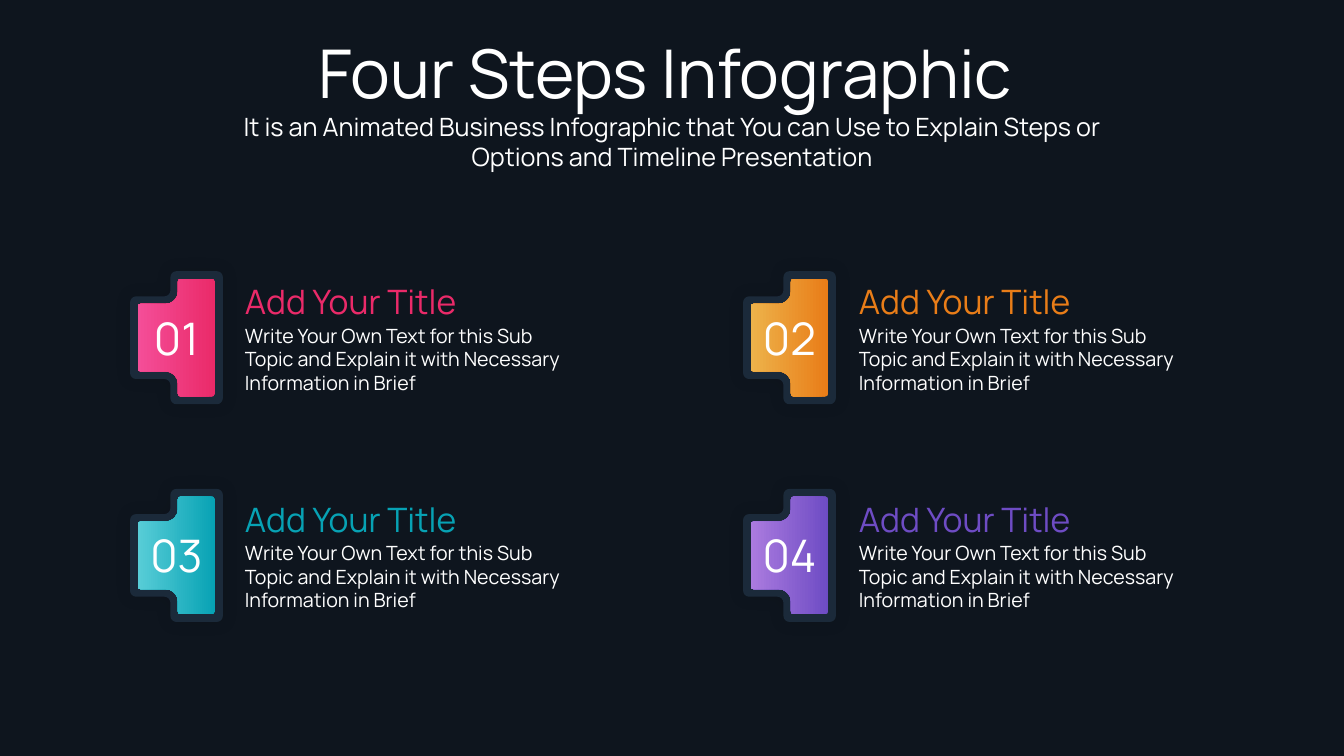
from lxml.etree import SubElement
from pptx import Presentation
from pptx.dml.color import RGBColor
from pptx.enum.text import MSO_AUTO_SIZE as AutoSize, PP_ALIGN as Align
from pptx.oxml.ns import qn
from pptx.util import Inches, Pt

FONT = "Manrope"
WHITE = "FFFFFF"
BACKGROUND = "0E151E"
FRAME = "1B2A3A"
FRAME_SIZE = (0.92, 1.32)
FACE_SIZE = (0.77, 1.17)
STEP_X, STEP_Y = 0.4, 0.25
CURVE = 0.55
COLUMNS = ((1.29, 2.33), (7.37, 8.42))
ROWS = (2.69, 4.85)
HEADING = "Add Your Title"
DETAILS = [
    "Write Your Own Text for this Sub",
    "Topic and Explain it with Necessary",
    "Information in Brief",
]
STEPS = [
    ("01", "EA2A69", "F44E98"),
    ("02", "E97D18", "EDB24A"),
    ("03", "07A2B4", "58CDD7"),
    ("04", "6E4CC4", "AB7BDF"),
]


def color(hex_value):
    """Return the colour for a hex string."""
    return RGBColor.from_string(hex_value)


def paint(fill, *hex_values):
    """Fill with one plain colour, or with a gradient from right to left."""
    if len(hex_values) == 1:
        fill.solid()
        fill.fore_color.rgb = color(hex_values[0])
        return
    fill.gradient()
    fill.gradient_angle = 180
    for stop, hex_value in zip(fill.gradient_stops, hex_values):
        stop.color.rgb = color(hex_value)


def add_text(shapes, box, lines, size, hex_values, align=Align.LEFT, wrap=False):
    """Add a text box with one paragraph per line."""
    text_box = shapes.add_textbox(*[Inches(length) for length in box])
    frame = text_box.text_frame
    frame.word_wrap = wrap
    frame.auto_size = AutoSize.SHAPE_TO_FIT_TEXT
    for index, line in enumerate(lines):
        paragraph = frame.add_paragraph() if index else frame.paragraphs[0]
        paragraph.alignment = align
        run = paragraph.add_run()
        run.text = line
        run.font.name = FONT
        run.font.size = Pt(size)
        paint(run.font.fill, *hex_values)


def move_toward(start, target, distance):
    """Return the point at a distance from start along an axis to target."""
    dx, dy = target[0] - start[0], target[1] - start[1]
    length = abs(dx) + abs(dy)
    return start[0] + dx / length * distance, start[1] + dy / length * distance


def curve_corner(line, start, corner, end):
    """Turn the line that cuts a corner into a Bezier curve."""
    controls = [tuple(p + CURVE * (c - p) for p, c in zip(point, corner))
                for point in (start, end)]
    line.tag = qn("a:cubicBezTo")
    line.clear()
    for x, y in controls + [end]:
        SubElement(line, qn("a:pt"), x=str(Inches(x)), y=str(Inches(y)))


def add_tab(shapes, left, top, size, outer_radius, inner_radius):
    """Add a stepped tab with rounded corners."""
    width, height = size
    lower = height - STEP_Y
    corners = [
        (width, 0), (width, height), (STEP_X, height), (STEP_X, lower),
        (0, lower), (0, STEP_Y), (STEP_X, STEP_Y), (STEP_X, 0),
    ]
    arcs = []
    for index, corner in enumerate(corners):
        radius = inner_radius if index in (3, 6) else outer_radius
        arcs.append((move_toward(corner, corners[index - 1], radius), corner,
                     move_toward(corner, corners[(index + 1) % 8], radius)))
    points = [point for start, _, end in arcs for point in (start, end)]
    outline = [(Inches(left + x), Inches(top + y)) for x, y in points]
    builder = shapes.build_freeform(*outline[-1])
    builder.add_line_segments(outline, close=True)
    tab = builder.convert_to_shape()
    cuts = list(tab.element.spPr.iter(qn("a:lnTo")))[1::2]
    for line, arc in zip(cuts, arcs):
        curve_corner(line, *arc)
    tab.shadow.inherit = False
    tab.line.fill.background()
    return tab


def add_glow(shape):
    """Give the shape a soft, centred black shadow."""
    effects = shape.element.spPr.find(qn("a:effectLst"))
    shadow = SubElement(effects, qn("a:outerShdw"), blurRad=str(Pt(12)), dist="0",
                        dir="0", algn="ctr", rotWithShape="0")
    black = SubElement(shadow, qn("a:srgbClr"), val="000000")
    SubElement(black, qn("a:alpha"), val="10000")


def add_badge(slide, left, top, number, dark, light):
    """Add the numbered badge of one step."""
    shapes = slide.shapes.add_group_shape().shapes
    frame = add_tab(shapes, left, top, FRAME_SIZE, 0.06, 0.06)
    paint(frame.fill, FRAME)
    add_glow(frame)
    inset = (FRAME_SIZE[0] - FACE_SIZE[0]) / 2
    face = add_tab(shapes, left + inset, top + inset, FACE_SIZE, 0.03, 0.12)
    paint(face.fill, dark, light)
    add_text(shapes, (left + inset, top + 0.34, FACE_SIZE[0], 0.64), [number], 32,
             [WHITE], Align.CENTER)


def add_step(slide, left, text_left, top, number, dark, light):
    """Add one step: heading, details and badge."""
    add_text(slide.shapes, (text_left, top + 0.05, 2.71, 0.5), [HEADING], 24, [dark, light])
    add_text(slide.shapes, (text_left, top + 0.47, 3.63, 0.81), DETAILS, 14, [WHITE])
    add_badge(slide, left, top, number, dark, light)


def add_header(slide, left, top, width):
    """Add the slide title and its subtitle."""
    add_text(slide.shapes, (left, top, width, 0.91), ["Four Steps Infographic "],
             48, [WHITE], Align.CENTER, True)
    subtitle = ("It is an Animated Business Infographic that You can Use to Explain "
                "Steps or Options and Timeline Presentation")
    add_text(slide.shapes, (left, top + 0.79, width, 0.71), [subtitle],
             18, [WHITE], Align.CENTER, True)


def main():
    """Build and save the presentation."""
    presentation = Presentation()
    presentation.slide_width = Inches(13.33)
    presentation.slide_height = Inches(7.5)
    slide = presentation.slides.add_slide(presentation.slide_layouts[6])
    paint(slide.background.fill, BACKGROUND)
    for index, step in enumerate(STEPS):
        add_step(slide, *COLUMNS[index % 2], ROWS[index // 2], *step)
    add_header(slide, 1.87, 0.26, 9.59)
    presentation.save("out.pptx")


if __name__ == "__main__":
    main()
